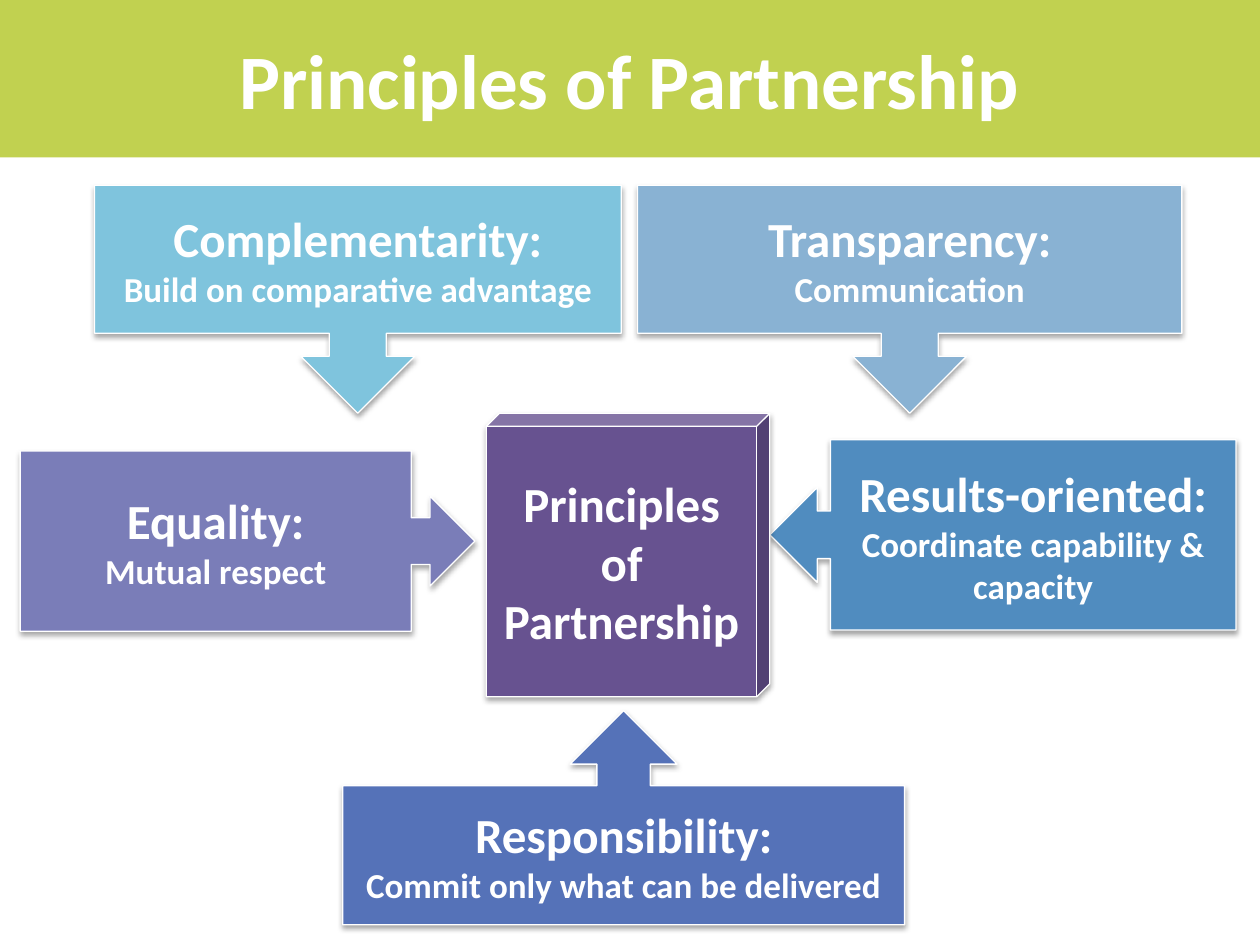
from lxml import etree
from pptx import Presentation
from pptx.dml.color import RGBColor
from pptx.enum.shapes import MSO_SHAPE as Kind
from pptx.enum.text import MSO_ANCHOR as Anchor, PP_ALIGN as Align
from pptx.oxml.ns import qn
from pptx.util import Inches, Pt

WHITE = RGBColor(0xFF, 0xFF, 0xFF)
LIME = RGBColor(0xC1, 0xD1, 0x50)
AQUA = RGBColor(0x7F, 0xC4, 0xDD)
SKY = RGBColor(0x89, 0xB2, 0xD3)
ROYAL = RGBColor(0x55, 0x72, 0xB8)
LILAC = RGBColor(0x7A, 0x7D, 0xB8)
BLUE = RGBColor(0x50, 0x8C, 0xBF)
PLUM = RGBColor(0x67, 0x52, 0x90)

FONT = {"name": "Calibri", "bold": True}
HEAD, BODY, TITLE = 28, 20, 44

CALLS = [
    (Kind.DOWN_ARROW_CALLOUT, (0.75, 1.47, 4.18, 1.81), AQUA, (),
     "Complementarity:", "Build on comparative advantage"),
    (Kind.DOWN_ARROW_CALLOUT, (5.06, 1.47, 4.32, 1.81), SKY, (),
     "Transparency:", "Communication"),
    (Kind.UP_ARROW_CALLOUT, (2.72, 5.64, 4.46, 1.7), ROYAL, (),
     "Responsibility:", "Commit only what can be delivered"),
    (Kind.RIGHT_ARROW_CALLOUT, (0.16, 3.58, 3.61, 1.43), LILAC,
     (0.26, 0.25, 0.25, 0.86), "Equality:", "Mutual respect"),
    (Kind.LEFT_ARROW_CALLOUT, (6.11, 3.49, 3.7, 1.51), BLUE,
     (0.25, 0.25, 0.25, 0.87), "Results-oriented:",
     "Coordinate capability & capacity"),
]


def add_block(slide, kind, box, fill, lines):
    """Add a filled shape whose lines of text are (words, size) pairs."""
    shape = slide.shapes.add_shape(kind, *map(Inches, box))
    shape.shadow.inherit = False
    shape.fill.solid()
    shape.fill.fore_color.rgb = fill
    shape.line.fill.background()
    frame = shape.text_frame
    frame.word_wrap = True
    frame.vertical_anchor = Anchor.MIDDLE
    para = frame.paragraphs[0]
    para.alignment = Align.CENTER
    for i, (words, size) in enumerate(lines):
        if i:
            para.add_line_break()
        run = para.add_run()
        run.text = words
        for key, value in {**FONT, "size": Pt(size)}.items():
            setattr(run.font, key, value)
        run.font.color.rgb = WHITE
    return shape


def add_raised(slide, kind, box, fill, lines, adjust=()):
    """Add a block with a white outline and a soft shadow below it."""
    shape = add_block(slide, kind, box, fill, lines)
    shape.line.color.rgb = WHITE
    shape.line.width = Pt(0.75)
    for i, value in enumerate(adjust):
        shape.adjustments[i] = value
    effects = shape._element.spPr.find(qn("a:effectLst"))
    shade = etree.SubElement(
        effects, qn("a:outerShdw"), blurRad=str(Pt(3.1)), dist=str(Pt(1.8)),
        dir="5400000", rotWithShape="0")
    color = etree.SubElement(shade, qn("a:srgbClr"), val="000000")
    etree.SubElement(color, qn("a:alpha"), val="35000")


def add_title(slide, box):
    """Add the title band."""
    add_block(slide, Kind.RECTANGLE, box, LIME,
              [("Principles of Partnership", TITLE)])


def add_calls(slide):
    """Add the five principles that point to the centre."""
    for kind, box, fill, adjust, head, body in CALLS:
        add_raised(slide, kind, box, fill, [(head, HEAD), (body, BODY)], adjust)


def add_core(slide, box):
    """Add the cube in the centre."""
    add_raised(slide, Kind.CUBE, box, PLUM,
               [("Principles of Partnership", HEAD)], (0.046,))


def main():
    """Build and save the slide."""
    deck = Presentation()
    deck.slide_width, deck.slide_height = Inches(10), Inches(7.5)
    slide = deck.slides.add_slide(deck.slide_layouts[6])
    add_title(slide, (0, 0, 10, 1.25))
    add_calls(slide)
    add_core(slide, (3.86, 3.28, 2.25, 2.25))
    deck.save("out.pptx")


if __name__ == "__main__":
    main()
